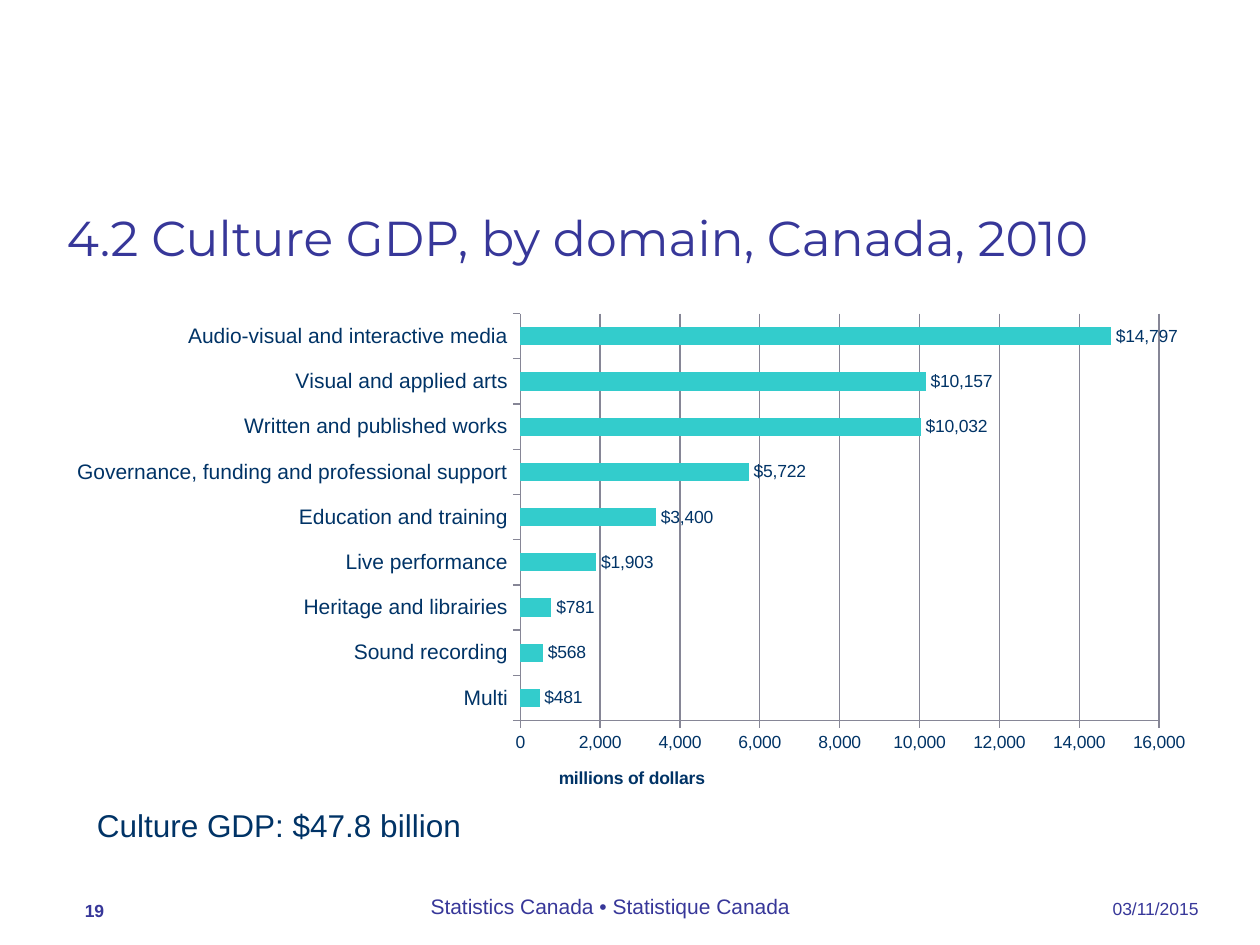
from dataclasses import dataclass

from lxml import etree
from pptx import Presentation
from pptx.chart.data import CategoryChartData
from pptx.dml.color import RGBColor
from pptx.enum.chart import XL_CHART_TYPE, XL_LABEL_POSITION, XL_TICK_MARK
from pptx.enum.shapes import MSO_SHAPE
from pptx.enum.text import MSO_ANCHOR, PP_ALIGN
from pptx.oxml.ns import qn
from pptx.util import Pt

BAR = XL_CHART_TYPE.BAR_CLUSTERED
OUTSIDE_END = XL_LABEL_POSITION.OUTSIDE_END
TICK_OUT = XL_TICK_MARK.OUTSIDE
ROUNDED = MSO_SHAPE.ROUNDED_RECTANGLE
TOP, BOTTOM = MSO_ANCHOR.TOP, MSO_ANCHOR.BOTTOM
LEFT, CENTER, RIGHT = PP_ALIGN.LEFT, PP_ALIGN.CENTER, PP_ALIGN.RIGHT

EMU_PER_PX = 9144
COLORS = {"heading": "373799", "body": "003366", "bar": "33CCCC", "rule": "868696"}
CHART_BOX = (43, 241, 916, 405)

GDP_BY_DOMAIN = {
    "Multi": 481,
    "Sound recording": 568,
    "Heritage and librairies": 781,
    "Live performance": 1903,
    "Education and training": 3400,
    "Governance, funding and professional support": 5722,
    "Written and published works": 10032,
    "Visual and applied arts": 10157,
    "Audio-visual and interactive media": 14797,
}


@dataclass(frozen=True)
class Label:
    text: str
    box: tuple[int, int, int, int]
    size: int
    color: str = "heading"
    font: str = "Arial"
    align: PP_ALIGN = LEFT
    anchor: MSO_ANCHOR = BOTTOM
    bold: bool = False


DATE = Label("03/11/2015", (846, 682, 115, 52), 10, align=RIGHT)
AGENCY = Label("Statistics Canada • Statistique Canada", (154, 682, 661, 52), 12, align=CENTER)
PAGE = Label("19", (43, 683, 64, 53), 10, align=CENTER, bold=True)
HEADLINE = Label("4.2 Culture GDP, by domain, Canada, 2010", (43, 139, 914, 77), 28,
                 font="Montserrat")
TOTAL = Label("Culture GDP: $47.8 billion", (67, 635, 409, 40), 18, color="body", anchor=TOP)


def px(length: int) -> int:
    return length * EMU_PER_PX


def rgb(name: str) -> RGBColor:
    return RGBColor.from_string(COLORS[name])


def style_font(font, size: int, color: str, name: str = "Arial", bold: bool = False) -> None:
    font.size = Pt(size)
    font.name = name
    font.bold = bold
    font.color.rgb = rgb(color)


def write_label(frame, label: Label) -> None:
    frame.word_wrap = True
    frame.vertical_anchor = label.anchor
    paragraph = frame.paragraphs[0]
    paragraph.alignment = label.align
    run = paragraph.add_run()
    run.text = label.text
    style_font(run.font, label.size, label.color, label.font, label.bold)


def add_label(slide, label: Label) -> None:
    write_label(slide.shapes.add_textbox(*map(px, label.box)).text_frame, label)


def add_headline(slide) -> None:
    panel = slide.shapes.add_shape(ROUNDED, *map(px, HEADLINE.box))
    panel.adjustments[0] = 0.22
    panel.shadow.inherit = False
    panel.fill.background()
    panel.line.fill.background()
    panel.text_frame.margin_left = px(5)
    panel.text_frame.margin_bottom = 0
    write_label(panel.text_frame, HEADLINE)


def set_layout(parent, index: int, modes: dict[str, str], **lengths: int) -> None:
    for previous in parent.findall(qn("c:layout")):
        parent.remove(previous)
    chart_width, chart_height = CHART_BOX[2:]
    spans = {"x": chart_width, "y": chart_height, "w": chart_width, "h": chart_height}
    shares = {side: length / spans[side] for side, length in lengths.items()}
    layout = etree.Element(qn("c:layout"))
    manual = etree.SubElement(layout, qn("c:manualLayout"))
    for tag, value in (modes | shares).items():
        etree.SubElement(manual, qn(f"c:{tag}")).set("val", str(value))
    parent.insert(index, layout)


def add_gdp_chart(slide) -> None:
    gdp = CategoryChartData()
    gdp.categories = list(GDP_BY_DOMAIN)
    gdp.add_series("Series 1", list(GDP_BY_DOMAIN.values()))
    chart = slide.shapes.add_chart(BAR, *map(px, CHART_BOX), gdp).chart
    chart.has_legend = False
    chart.has_title = False
    style_font(chart.font, 10, "body")

    plot = chart.plots[0]
    plot.gap_width = 150
    plot.vary_by_categories = False
    bars = plot.series[0].format.fill
    bars.solid()
    bars.fore_color.rgb = rgb("bar")

    plot.has_data_labels = True
    amounts = plot.data_labels
    amounts.show_value = True
    amounts.position = OUTSIDE_END
    amounts.number_format = '"$"#,##0'
    amounts.number_format_is_linked = False
    style_font(amounts.font, 10, "body")

    domains, dollars = chart.category_axis, chart.value_axis
    dollars.has_major_gridlines = True
    dollars.minimum_scale, dollars.maximum_scale, dollars.major_unit = 0, 16000, 2000
    dollars.tick_labels.number_format = "#,##0"
    dollars.tick_labels.number_format_is_linked = False
    for axis, size in ((domains, 12), (dollars, 10)):
        axis.major_tick_mark = TICK_OUT
        style_font(axis.tick_labels.font, size, "body")
    for rule in (domains, dollars, dollars.major_gridlines):
        rule.format.line.color.rgb = rgb("rule")
        rule.format.line.width = Pt(0.75)

    unit = dollars.axis_title.text_frame.paragraphs[0].add_run()
    unit.text = "millions of dollars"
    style_font(unit.font, 10, "body", bold=True)

    plot_area = chart.element.find(f".//{qn('c:plotArea')}")
    unit_title = plot_area.find(f".//{qn('c:title')}")
    edges = {"xMode": "edge", "yMode": "edge"}
    set_layout(plot_area, 0, {"layoutTarget": "inner"} | edges, x=370, y=8, w=507, h=323)
    set_layout(unit_title, 1, edges, x=398, y=365)


def main() -> None:
    deck = Presentation()
    deck.slide_width, deck.slide_height = px(1000), px(750)
    slide = deck.slides.add_slide(deck.slide_layouts[6])
    for footer in (DATE, AGENCY, PAGE):
        add_label(slide, footer)
    add_headline(slide)
    add_gdp_chart(slide)
    add_label(slide, TOTAL)
    deck.save("out.pptx")


if __name__ == "__main__":
    main()
